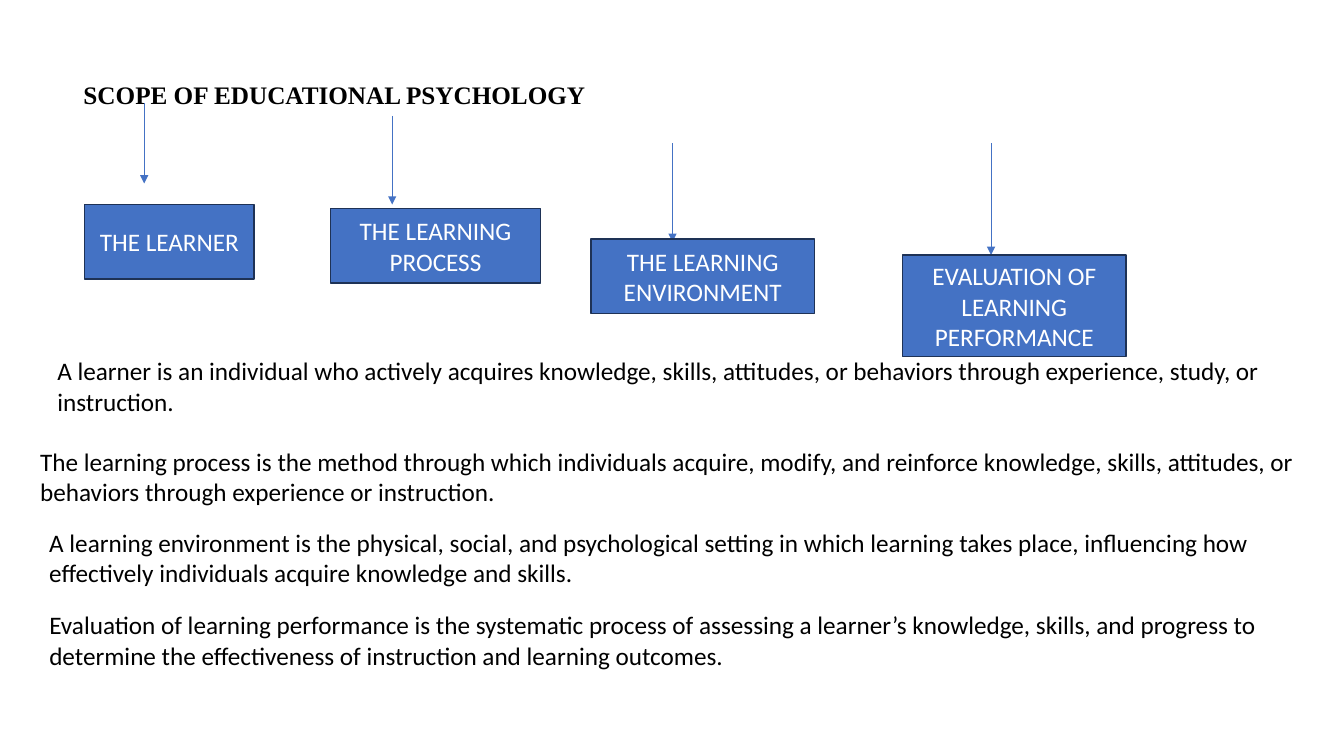
from lxml import etree
from pptx import Presentation
from pptx import util as u
from pptx.dml.color import RGBColor
from pptx.enum import shapes, text
from pptx.oxml.ns import qn

PX = 9144  # EMU per px, 100 px to the inch
BLUE, NAVY, WHITE, BLACK = "4472C4", "1E3256", "FFFFFF", "000000"

# (box, arrow x from box left, arrow start and end from box top, label)
BRANCHES = [
    ((84, 203, 168, 74), 59, -101, -21, "THE LEARNER"),
    ((328, 207, 208, 74), 61, -92, -4, "THE LEARNING PROCESS"),
    ((586, 237, 222, 74), 81, -95, 3, "THE LEARNING ENVIRONMENT"),
    ((895, 253, 222, 101), 88, -111, 0, "EVALUATION OF LEARNING PERFORMANCE"),
]
DEFINITIONS = [
    ((47, 348, 1247, 71),
     "A learner is an individual who actively acquires knowledge, skills, attitudes, "
     "or behaviors through experience, study, or instruction."),
    ((30, 438, 1273, 71),
     "The learning process is the method through which individuals acquire, modify, and "
     "reinforce knowledge, skills, attitudes, or behaviors through experience or instruction."),
    ((39, 518, 1256, 71),
     "A learning environment is the physical, social, and psychological setting in which "
     "learning takes place, influencing how effectively individuals acquire knowledge and skills."),
    ((39, 600, 1265, 71),
     "Evaluation of learning performance is the systematic process of assessing a learner’s "
     "knowledge, skills, and progress to determine the effectiveness of instruction and "
     "learning outcomes."),
]


def px(*lengths):
    return [u.Emu(length * PX) for length in lengths]


def color(value):
    return RGBColor.from_string(value)


def write(frame, words, ink, face="Calibri", bold=False):
    frame.word_wrap = True
    para = frame.paragraphs[0]
    para.text = words
    para.font.name = face
    para.font.size = u.Pt(18)
    para.font.bold = bold
    para.font.color.rgb = color(ink)
    return para


def add_text(page, box, words, **style):
    frame = page.shapes.add_textbox(*px(*box)).text_frame
    write(frame, words, BLACK, **style)
    frame.auto_size = text.MSO_AUTO_SIZE.SHAPE_TO_FIT_TEXT


def add_arrow(page, x, start, end):
    arrow = page.shapes.add_connector(shapes.MSO_CONNECTOR.STRAIGHT, *px(x, start, x, end))
    arrow.line.color.rgb = color(BLUE)
    arrow.line.width = u.Pt(0.5)
    etree.SubElement(arrow.line._get_or_add_ln(), qn("a:tailEnd"), type="triangle")
    etree.SubElement(arrow._element.spPr, qn("a:effectLst"))


def add_branch(page, box, arrow_x, arrow_start, arrow_end, label):
    left, top = box[:2]
    add_arrow(page, left + arrow_x, top + arrow_start, top + arrow_end)
    block = page.shapes.add_shape(shapes.MSO_SHAPE.RECTANGLE, *px(*box))
    block.shadow.inherit = False
    block.fill.solid()
    block.fill.fore_color.rgb = color(BLUE)
    block.line.color.rgb = color(NAVY)
    block.line.width = u.Pt(1)
    block.text_frame.vertical_anchor = text.MSO_ANCHOR.MIDDLE
    write(block.text_frame, label, WHITE).alignment = text.PP_ALIGN.CENTER


def main():
    deck = Presentation()
    deck.slide_width, deck.slide_height = px(1333, 750)
    page = deck.slides.add_slide(deck.slide_layouts[6])

    # Heading
    add_text(page, (73, 74, 667, 40), "SCOPE OF EDUCATIONAL PSYCHOLOGY",
             face="Times New Roman", bold=True)
    # Four areas, each under its arrow
    for branch in BRANCHES:
        add_branch(page, *branch)
    # Definition of each area
    for box, words in DEFINITIONS:
        add_text(page, box, words)

    deck.save("out.pptx")


if __name__ == "__main__":
    main()
